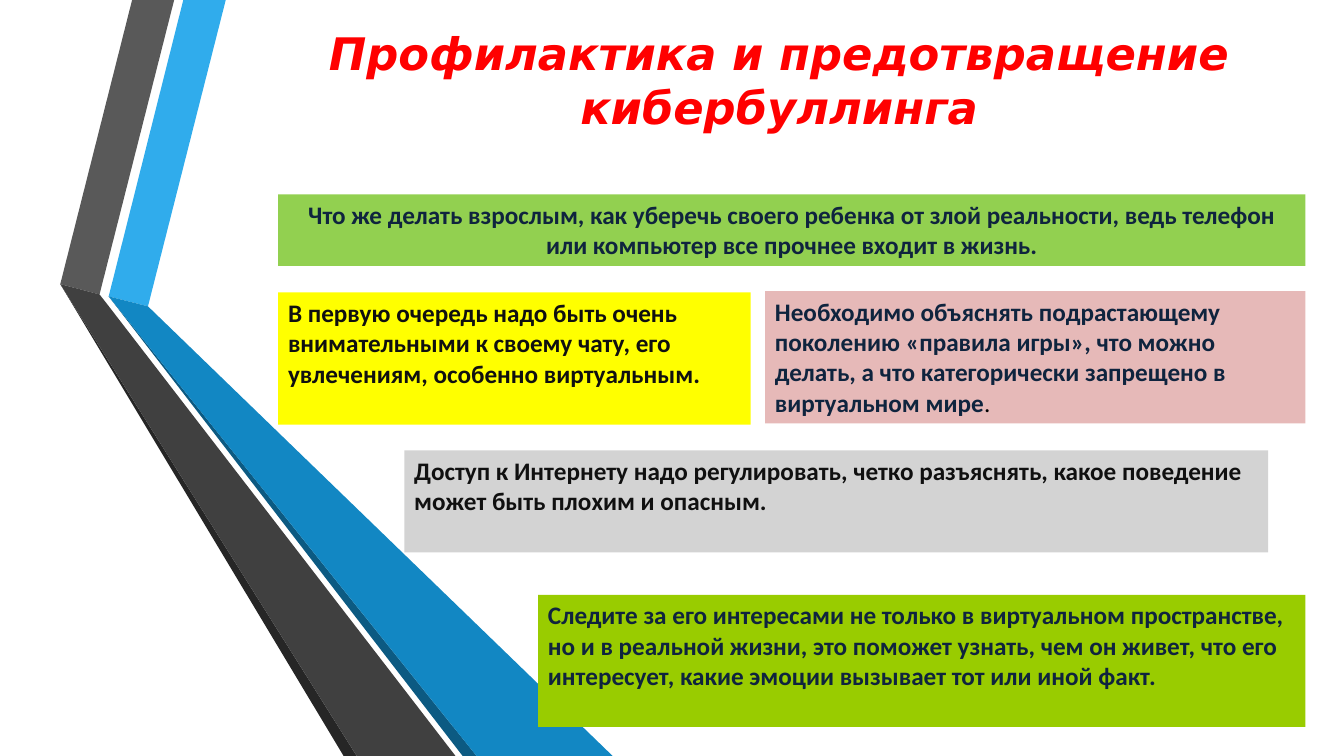
from pptx import Presentation
from pptx.dml.color import RGBColor
from pptx.enum.shapes import MSO_SHAPE
from pptx.enum.text import MSO_ANCHOR, MSO_AUTO_SIZE, PP_ALIGN
from pptx.util import Cm, Pt

SLIDE_WIDTH, SLIDE_HEIGHT = 33.87, 19.05
RIGHT_EDGE = 32.9
NAVY, INK = "0F243E", "101010"


def color(hex_value):
    return RGBColor.from_string(hex_value)


def add_text(paragraph, text, *, font="Calibri", size=18, fill=NAVY, bold=True, italic=False):
    run = paragraph.add_run()
    run.text = text
    run.font.name = font
    run.font.size = Pt(size)
    run.font.bold = bold
    run.font.italic = italic
    run.font.color.rgb = color(fill)


class SlideBuilder:
    def __init__(self, slide):
        self.slide = slide

    def paint(self, shape, fill):
        shape.shadow.inherit = False
        shape.fill.solid()
        shape.fill.fore_color.rgb = color(fill)
        shape.line.fill.background()

    def prepare_frame(self, shape, align):
        frame = shape.text_frame
        frame.word_wrap = True
        frame.auto_size = MSO_AUTO_SIZE.NONE
        frame.vertical_anchor = MSO_ANCHOR.TOP
        frame.paragraphs[0].alignment = align
        return frame.paragraphs[0]

    def title(self, text, left, top, width, height):
        heading = self.slide.shapes.title
        heading.left, heading.top = Cm(left), Cm(top)
        heading.width, heading.height = Cm(width), Cm(height)
        paragraph = self.prepare_frame(heading, PP_ALIGN.CENTER)
        add_text(paragraph, text, font="DejaVu Sans", size=32, fill="FF0000", italic=True)

    def ribbon(self, fill, points):
        corners = [(Cm(x), Cm(y)) for x, y in points]
        outline = self.slide.shapes.build_freeform(*corners[0])
        outline.add_line_segments(corners[1:], close=True)
        self.paint(outline.convert_to_shape(), fill)

    def advice(self, text, fill, left, top, right, height, ink=NAVY, align=PP_ALIGN.LEFT):
        card = self.slide.shapes.add_shape(
            MSO_SHAPE.RECTANGLE, Cm(left), Cm(top), Cm(right - left), Cm(height))
        self.paint(card, fill)
        paragraph = self.prepare_frame(card, align)
        add_text(paragraph, text, fill=ink)
        return paragraph


def main():
    presentation = Presentation()
    presentation.slide_width, presentation.slide_height = Cm(SLIDE_WIDTH), Cm(SLIDE_HEIGHT)
    builder = SlideBuilder(presentation.slides.add_slide(presentation.slide_layouts[5]))

    # Folded ribbons on the left, meeting at two shared folds
    blue_fold, blue_inner = (2.74, 7.47), (3.73, 7.72)
    gray_fold, gray_inner = (1.52, 7.16), (2.51, 7.42)
    bottom = SLIDE_HEIGHT
    ribbons = [
        ("30ACEC", [blue_fold, blue_inner, (5.69, 0), (4.62, 0)]),
        ("595959", [gray_inner, (4.39, 0), (3.33, 0), gray_fold]),
        ("262626", [gray_fold, (8.66, bottom), (8.99, bottom)]),
        ("0C5A82", [blue_fold, (11.66, bottom), (12.01, bottom)]),
        ("1287C3", [blue_fold, (12.01, bottom), (15.44, bottom), blue_inner]),
        ("404040", [gray_fold, (8.99, bottom), (11.48, bottom), (2.69, 7.65), gray_inner]),
    ]
    for fill, points in ribbons:
        builder.ribbon(fill, points)

    # Title
    builder.title("Профилактика и предотвращение кибербуллинга", 6.1, 0.53, 27.08, 3)

    # Opening question
    builder.advice(
        "Что же делать взрослым, как уберечь своего ребенка от злой реальности, "
        "ведь телефон или компьютер все прочнее входит в жизнь.",
        "92D050", 7.01, 4.9, RIGHT_EDGE, 1.8, align=PP_ALIGN.CENTER)

    # Advice to parents
    builder.advice(
        "В первую очередь надо быть очень внимательными к своему чату, "
        "его увлечениям, особенно виртуальным.",
        "FFFF00", 7.01, 7.37, 18.92, 3.33, ink=INK)
    rules = builder.advice(
        "Необходимо объяснять подрастающему поколению «правила игры», "
        "что можно делать, а что категорически запрещено в виртуальном мире",
        "E6B9B8", 19.28, 7.34, RIGHT_EDGE, 3.33)
    add_text(rules, ".", fill="000000", bold=False)
    builder.advice(
        "Доступ к Интернету надо регулировать, четко разъяснять, "
        "какое поведение может быть плохим и опасным.",
        "D3D3D3", 10.19, 11.35, 31.96, 2.57, ink=INK)
    builder.advice(
        "Следите за его интересами не только в виртуальном пространстве, "
        "но и в реальной жизни, это поможет узнать, чем он живет, что его "
        "интересует, какие эмоции вызывает тот или иной факт.",
        "99CC00", 13.56, 14.99, RIGHT_EDGE, 3.33)

    presentation.save("out.pptx")


if __name__ == "__main__":
    main()
